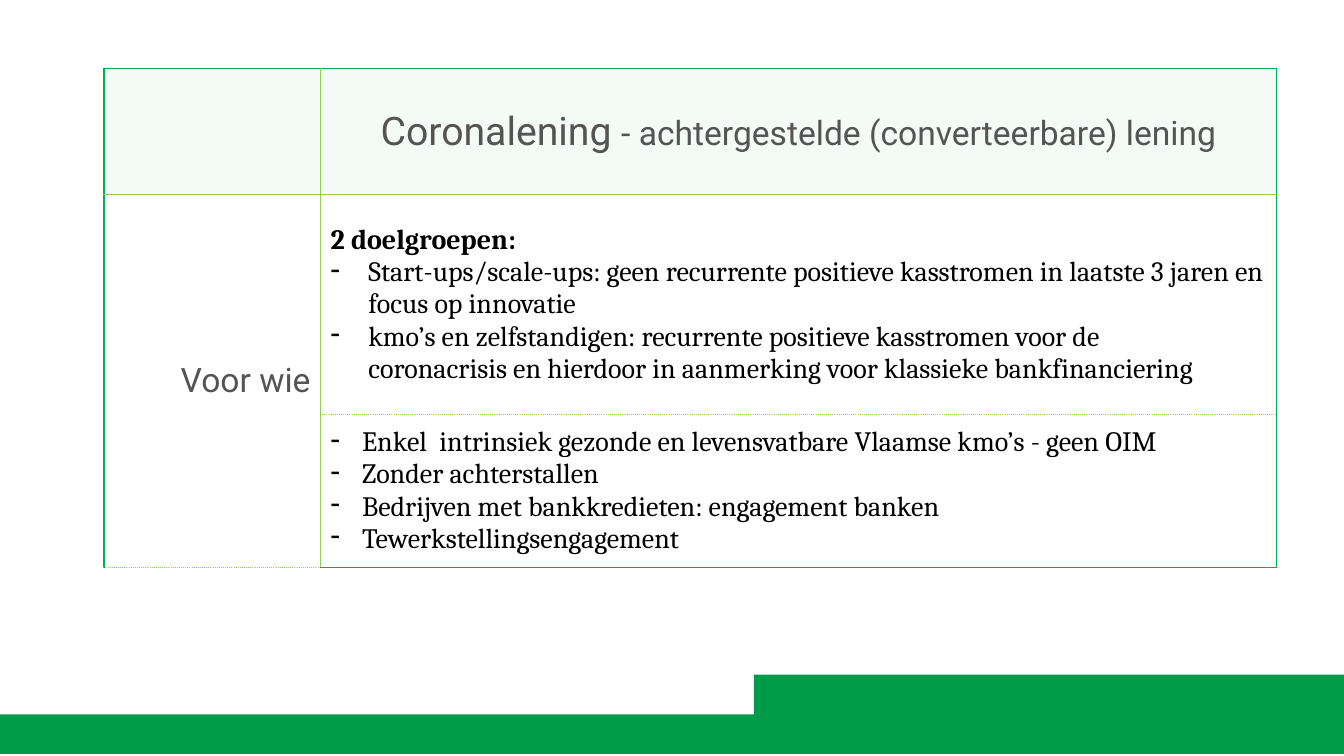
from dataclasses import dataclass
from typing import Optional

import pptx
import pptx.dml.color
import pptx.enum.text
import pptx.oxml
import pptx.oxml.ns
import pptx.util
from pptx.util import Cm

ALIGN = pptx.enum.text.PP_ALIGN
LEAF, LIME, GREY, BLACK = "00B050", "92D050", "545454", "000000"
MINT, WHITE, MEADOW = "F4FBF7", "FFFFFF", "009B48"
SIDES = ("lnL", "lnR", "lnT", "lnB")


@dataclass
class Line:
    text: str
    indent: float = 0
    dash: bool = False
    bold: bool = False


@dataclass
class Edge:
    color: str
    style: str = "solid"


def rgb(color: str) -> pptx.dml.color.RGBColor:
    return pptx.dml.color.RGBColor.from_string(color)


def add_text(paragraph, text: str, *, font: str = "Roboto", size: float = 24,
             color: str = GREY, bold: bool = False) -> None:
    run = paragraph.add_run()
    run.text = text
    run.font.name = font
    run.font.size = pptx.util.Pt(size)
    run.font.bold = bold
    run.font.color.rgb = rgb(color)


def set_indent(paragraph, line: Line) -> None:
    properties = paragraph._p.get_or_add_pPr()
    properties.set("marL", str(Cm(line.indent)))
    properties.set("indent", str(-Cm(line.indent) if line.dash else 0))
    bullet = '<a:buChar %s char="-"/>' if line.dash else "<a:buNone %s/>"
    properties.append(pptx.oxml.parse_xml(bullet % pptx.oxml.ns.nsdecls("a")))


def fill_lines(cell, lines: list[Line]) -> None:
    for index, line in enumerate(lines):
        frame = cell.text_frame
        paragraph = frame.add_paragraph() if index else frame.paragraphs[0]
        set_indent(paragraph, line)
        add_text(paragraph, line.text, font="Cambria", size=20, color=BLACK, bold=line.bold)


def style_cell(cell, fill: str, edges: tuple[Edge, Edge, Edge, Edge]) -> None:
    cell.vertical_anchor = pptx.enum.text.MSO_ANCHOR.MIDDLE
    properties = cell._tc.get_or_add_tcPr()
    for side, edge in zip(SIDES, edges):
        properties.append(pptx.oxml.parse_xml(
            f'<a:{side} {pptx.oxml.ns.nsdecls("a")} w="12700">'
            f'<a:solidFill><a:srgbClr val="{edge.color}"/></a:solidFill>'
            f'<a:prstDash val="{edge.style}"/></a:{side}>'))
    cell.fill.solid()
    cell.fill.fore_color.rgb = rgb(fill)


def bezier(points: list[float], t: float) -> float:
    start, first, second, end = points
    u = 1 - t
    return u**3 * start + 3 * u * u * t * first + 3 * u * t * t * second + t**3 * end


def draw_hill(slide, width: float, height: float, steps: int = 40) -> None:
    crest = [(bezier([0, 11.35, 22.53, width], i / steps),
              bezier([18.26, 17.93, 17.25, 16.92], i / steps)) for i in range(steps + 1)]
    builder = slide.shapes.build_freeform(*crest[0], scale=float(Cm(1)))
    builder.add_line_segments(crest[1:] + [(width, height), (0, height)])
    hill = builder.convert_to_shape()
    hill.shadow.inherit = False
    hill.fill.solid()
    hill.fill.fore_color.rgb = rgb(MEADOW)
    hill.line.fill.background()


def draw_loan_table(slide, groups: list[Line], conditions: list[Line]) -> None:
    widths, heights = (5.46, 24.08), (3.18, 5.54, 3.84)
    frame = slide.shapes.add_table(3, 2, Cm(2.62), Cm(1.73), Cm(sum(widths)), Cm(13.18))
    table = frame.table
    for column, width in zip(table.columns, widths):
        column.width = Cm(width)
    for row, height in zip(table.rows, heights):
        row.height = Cm(height)
    frame.height = Cm(13.18)

    outer, inner, dotted = Edge(LEAF), Edge(LIME), Edge(LIME, "sysDot")
    levels: list[Optional[Edge]] = [outer, inner, dotted, outer]
    for r in range(3):
        for c in range(2):
            top, bottom = levels[r], levels[r + 1]
            left, right = (outer, inner) if c == 0 else (inner, outer)
            style_cell(table.cell(r, c), WHITE if r else MINT, (left, right, top, bottom))

    audience = table.cell(1, 0)
    audience.merge(table.cell(2, 0))
    heading = table.cell(0, 1).text_frame.paragraphs[0]
    heading.alignment = ALIGN.CENTER
    add_text(heading, "Coronalening ", size=28)
    add_text(heading, "- achtergestelde (converteerbare) lening")
    label = audience.text_frame.paragraphs[0]
    label.alignment = ALIGN.RIGHT
    add_text(label, "Voor wie")
    fill_lines(table.cell(1, 1), groups)
    fill_lines(table.cell(2, 1), conditions)


def main() -> None:
    width, height = 33.87, 19.05
    deck = pptx.Presentation()
    deck.slide_width, deck.slide_height = Cm(width), Cm(height)
    slide = deck.slides.add_slide(deck.slide_layouts[6])
    draw_hill(slide, width, height)
    groups = [
        Line("2 doelgroepen:", bold=True),
        Line("Start-ups/scale-ups: geen recurrente positieve kasstromen in laatste 3 jaren "
             "en focus op innovatie", 0.95, True),
        Line("kmo’s en zelfstandigen: recurrente positieve kasstromen voor de", 0.95, True),
        Line("coronacrisis en hierdoor in aanmerking voor klassieke bankfinanciering", 0.95),
    ]
    conditions = [Line(text, 0.79, True) for text in (
        "Enkel  intrinsiek gezonde en levensvatbare Vlaamse kmo’s - geen OIM",
        "Zonder achterstallen",
        "Bedrijven met bankkredieten: engagement banken",
        "Tewerkstellingsengagement",
    )]
    draw_loan_table(slide, groups, conditions)
    deck.save("out.pptx")


if __name__ == "__main__":
    main()
